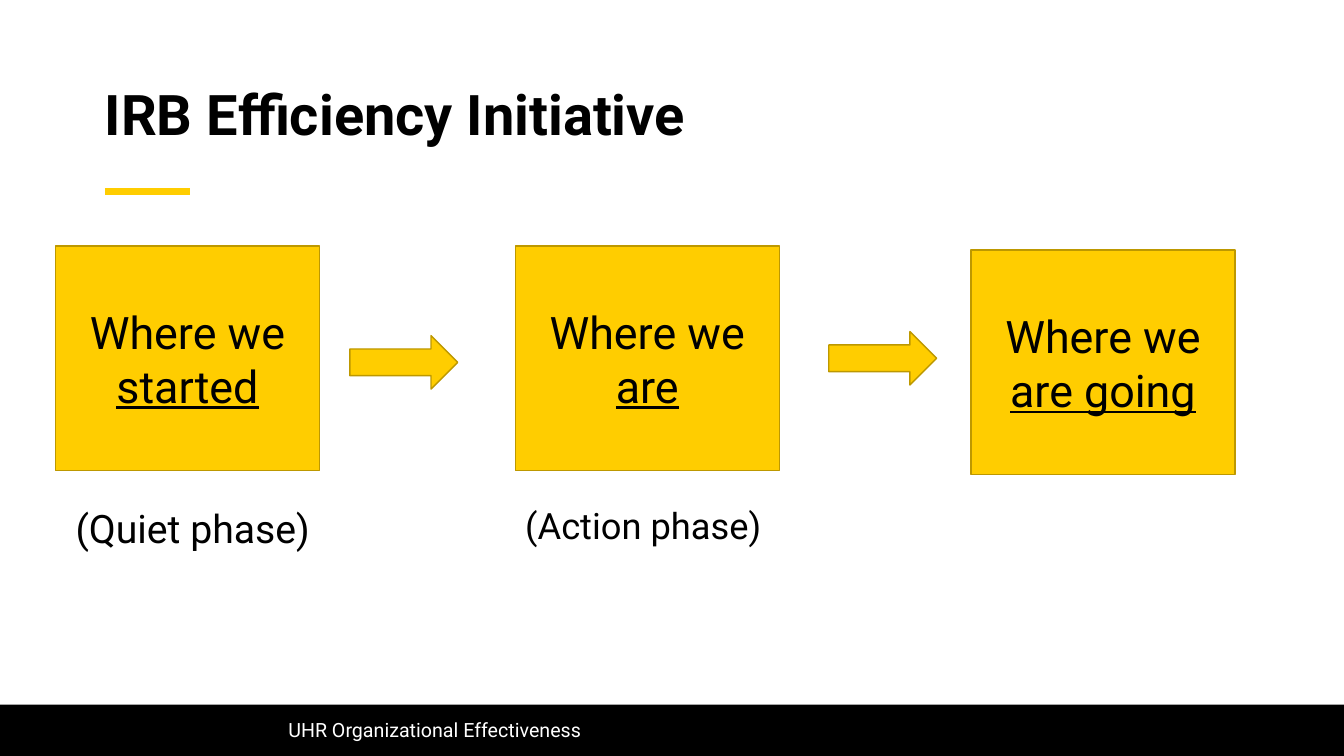
from dataclasses import dataclass

from lxml import etree
from pptx import Presentation
from pptx import util as u
from pptx.dml.color import RGBColor
from pptx.enum import shapes, text
from pptx.oxml import ns


@dataclass(frozen=True)
class Theme:
    font: str = "Roboto"
    gold: RGBColor = RGBColor(0xFF, 0xCD, 0x00)
    outline: RGBColor = RGBColor(0xBD, 0x98, 0x00)
    black: RGBColor = RGBColor(0, 0, 0)
    white: RGBColor = RGBColor(0xFF, 0xFF, 0xFF)
    title_size: float = 40
    stage_size: float = 32
    quiet_size: float = 28
    action_size: float = 25.9
    footer_size: float = 14


THEME = Theme()


def add_run(paragraph, words, size, color=THEME.black, bold=False, underline=False):
    run = paragraph.add_run()
    run.text = words
    run.font.name = THEME.font
    run.font.size = u.Pt(size)
    run.font.color.rgb = color
    run.font.bold = bold
    run.font.underline = underline


def add_label(slide, bounds, words, size, color=THEME.black, bold=False,
              anchor=text.MSO_ANCHOR.TOP):
    box = slide.shapes.add_textbox(*map(u.Inches, bounds))
    frame = box.text_frame
    frame.word_wrap = True
    frame.vertical_anchor = anchor
    frame.margin_left = frame.margin_right = 0
    frame.margin_top = frame.margin_bottom = 0
    paragraph = frame.paragraphs[0]
    add_run(paragraph, words, size, color, bold)
    return paragraph


def add_block(slide, kind, bounds, fill, outline=None):
    shape = slide.shapes.add_shape(kind, *map(u.Inches, bounds))
    shape.shadow.inherit = False
    shape.fill.solid()
    shape.fill.fore_color.rgb = fill
    if outline is None:
        shape.line.fill.background()
    else:
        shape.line.color.rgb = outline
        shape.line.width = u.Pt(1)
    return shape


def add_stage(slide, left, top, ending):
    shape = add_block(slide, shapes.MSO_SHAPE.RECTANGLE, (left, top, 2.62, 2.23),
                      THEME.gold, THEME.outline)
    frame = shape.text_frame
    frame.word_wrap = True
    frame.vertical_anchor = text.MSO_ANCHOR.MIDDLE
    paragraph = frame.paragraphs[0]
    paragraph.alignment = text.PP_ALIGN.CENTER
    add_run(paragraph, "Where we ", THEME.stage_size)
    add_run(paragraph, ending, THEME.stage_size, underline=True)


def add_arrow(slide, left, top):
    add_block(slide, shapes.MSO_SHAPE.RIGHT_ARROW, (left, top, 1.07, 0.53),
              THEME.gold, THEME.outline)


def add_accent(slide):
    ends = map(u.Inches, (1.04, 1.9, 1.88, 1.9))
    line = slide.shapes.add_connector(shapes.MSO_CONNECTOR.STRAIGHT, *ends)
    line.line.color.rgb = THEME.gold
    line.line.width = u.Pt(5)
    etree.SubElement(line._element.spPr, ns.qn("a:effectLst"))


def add_footer(slide):
    add_block(slide, shapes.MSO_SHAPE.RECTANGLE, (0, 6.99, 13.33, 0.51), THEME.black)
    add_label(slide, (2.86, 7.04, 9.3, 0.4), "UHR Organizational Effectiveness",
              THEME.footer_size, THEME.white, anchor=text.MSO_ANCHOR.MIDDLE)


def main():
    presentation = Presentation()
    presentation.slide_width = u.Inches(13.33)
    presentation.slide_height = u.Inches(7.5)
    slide = presentation.slides.add_slide(presentation.slide_layouts[6])

    add_accent(slide)
    add_footer(slide)
    for left, top, ending in ((0.55, 2.44, "started"), (5.11, 2.44, "are"),
                              (9.63, 2.48, "are going")):
        add_stage(slide, left, top, ending)
    add_label(slide, (0.75, 5, 2.43, 0.53), "(Quiet phase)", THEME.quiet_size)
    add_label(slide, (5.21, 4.99, 2.43, 0.53), "(Action phase)", THEME.action_size)
    for left, top in ((3.47, 3.33), (8.22, 3.29)):
        add_arrow(slide, left, top)
    title = add_label(slide, (1.04, 0.43, 11.25, 1.46), "IRB Efficiency Initiative",
                      THEME.title_size, bold=True, anchor=text.MSO_ANCHOR.MIDDLE)
    title.line_spacing = 0.9

    presentation.save("out.pptx")


if __name__ == "__main__":
    main()
